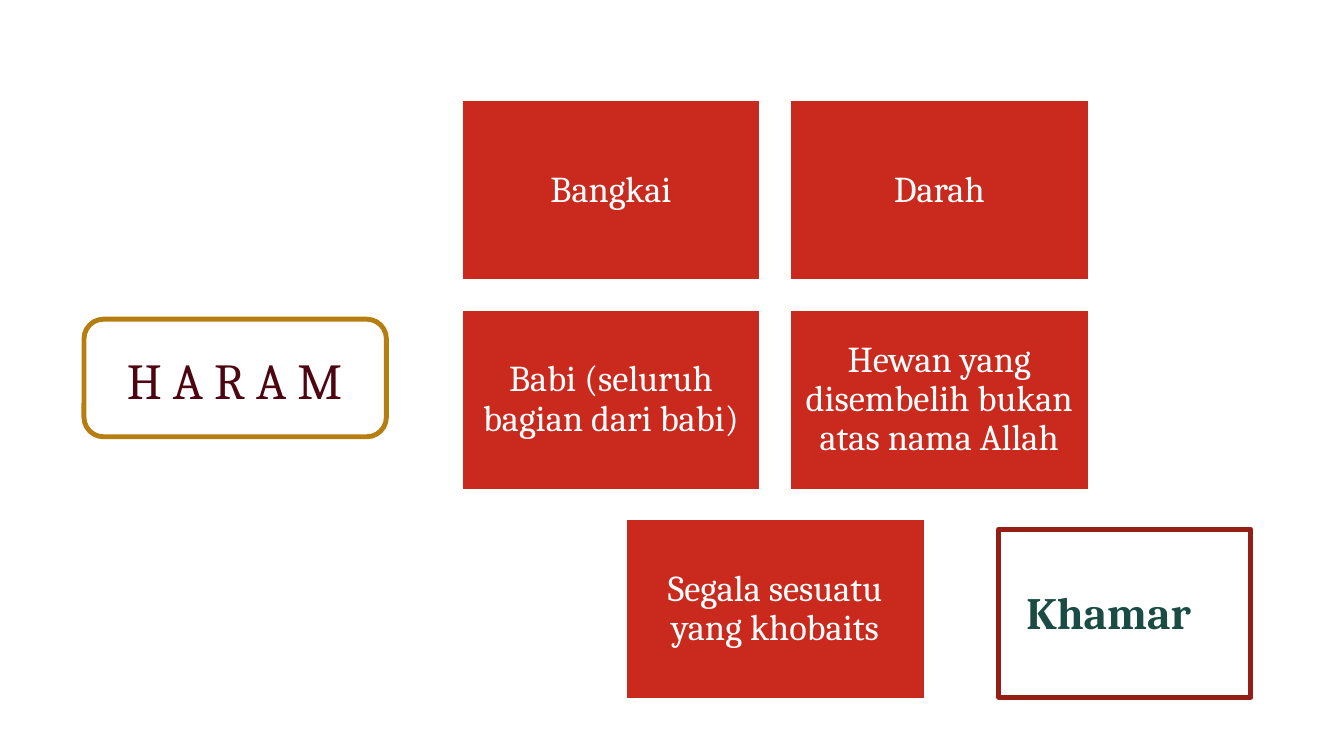
"""Build a slide listing the kinds of haram food."""
from pptx import Presentation
from pptx.dml.color import RGBColor
from pptx.enum.shapes import MSO_SHAPE as SHAPE
from pptx.enum.text import MSO_ANCHOR as ANCHOR, PP_ALIGN as ALIGN
from pptx.util import Pt

FOODS = [
    "Bangkai",
    "Darah",
    "Babi (seluruh bagian dari babi)",
    "Hewan yang disembelih bukan atas nama Allah",
    "Segala sesuatu yang khobaits",
]


class Deck:
    font = "Cambria"
    colors = {"card": "CA2A1E", "white": "FFFFFF", "title": "4D0511",
              "gold": "B67E10", "green": "1B4C43", "frame": "951F16"}

    def __init__(self, prs):
        self.slide = prs.slides.add_slide(prs.slide_layouts[6])

    def color(self, name):
        return RGBColor.from_string(self.colors[name])

    def set_text(self, tf, text, size, color, bold=False):
        tf.word_wrap = True
        p = tf.paragraphs[0]
        p.text = text
        p.font.name = self.font
        p.font.size = Pt(size)
        p.font.bold = bold
        p.font.color.rgb = self.color(color)
        return p

    def shape(self, kind, x, y, w, h, line, weight, fill=None):
        sp = self.slide.shapes.add_shape(kind, Pt(x), Pt(y), Pt(w), Pt(h))
        sp.shadow.inherit = False
        if fill:
            sp.fill.solid()
            sp.fill.fore_color.rgb = self.color(fill)
        else:
            sp.fill.background()
        sp.line.color.rgb = self.color(line)
        sp.line.width = Pt(weight)
        return sp

    def card(self, text, x, y, w, h):
        tf = self.shape(SHAPE.RECTANGLE, x, y, w, h, "white", 1, "card").text_frame
        tf.margin_left = tf.margin_right = tf.margin_top = tf.margin_bottom = Pt(8)
        tf.vertical_anchor = ANCHOR.MIDDLE
        p = self.set_text(tf, text, 26, "white")
        p.alignment = ALIGN.CENTER
        p.line_spacing = 0.9

    def label(self, text, x, y, w, h, size, color, bold=False):
        sp = self.slide.shapes.add_textbox(Pt(x), Pt(y), Pt(w), Pt(h))
        self.set_text(sp.text_frame, text, size, color, bold)


def main():
    prs = Presentation()
    prs.slide_width, prs.slide_height = Pt(960), Pt(540)
    deck = Deck(prs)

    left, top, w, h, gap, columns = 330, 72, 213, 128, 21.5, 2
    for i, food in enumerate(FOODS):
        row, col = divmod(i, columns)
        in_row = min(columns, len(FOODS) - row * columns)
        shift = col + (columns - in_row) / 2
        deck.card(food, left + shift * (w + gap), top + row * (h + gap), w, h)

    deck.label("H A R A M", 83.5, 246, 180, 51, 36, "title")
    deck.shape(SHAPE.ROUNDED_RECTANGLE, 60, 228, 216, 84, "gold", 3.5)
    deck.label("Khamar", 726, 414, 204, 46, 32, "green", bold=True)
    deck.shape(SHAPE.RECTANGLE, 713.5, 378, 180, 120, "frame", 3.5)

    prs.save("out.pptx")


if __name__ == "__main__":
    main()
